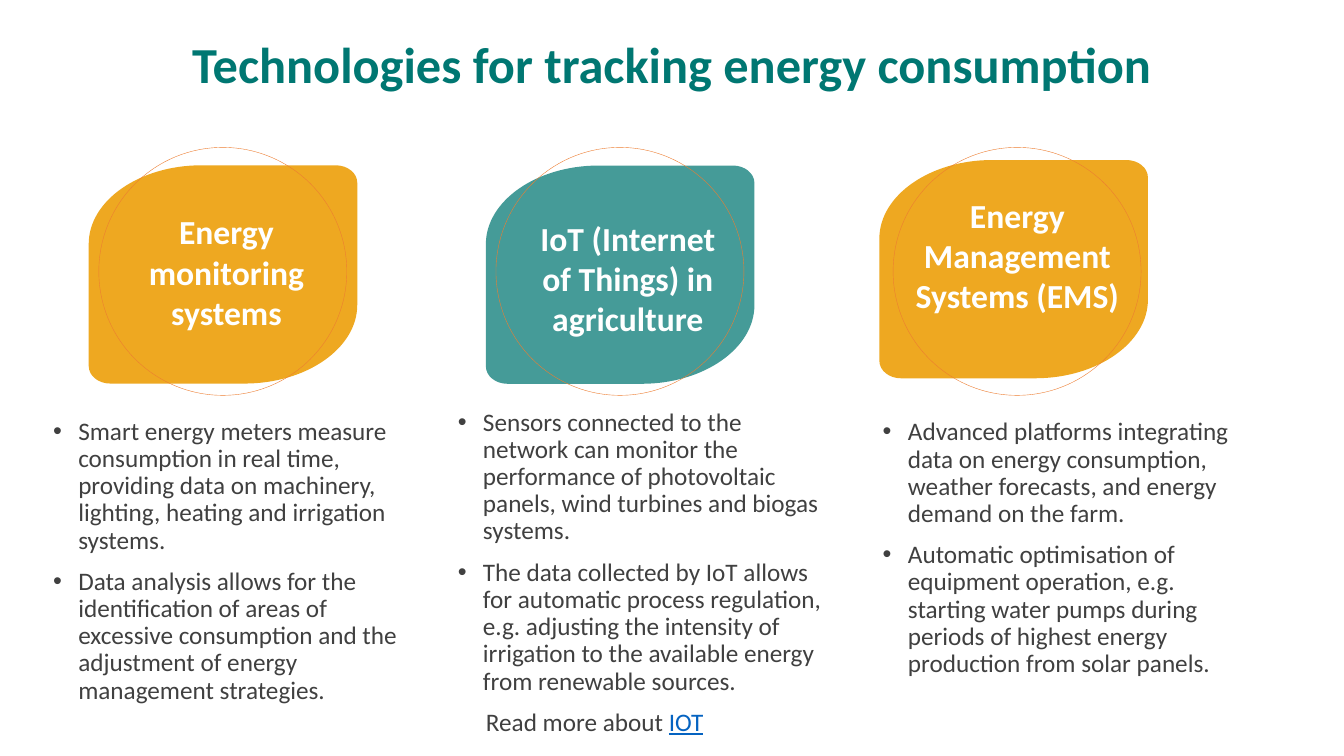
from dataclasses import dataclass

from lxml.etree import SubElement
from pptx import Presentation
from pptx.dml.color import RGBColor
from pptx.enum.shapes import MSO_SHAPE as Preset
from pptx.enum.text import MSO_ANCHOR as Anchor, MSO_AUTO_SIZE as AutoSize, PP_ALIGN as Align
from pptx.oxml.ns import qn
from pptx.util import Emu, Inches, Pt

WHITE = RGBColor(0xFF, 0xFF, 0xFF)
TEAL = RGBColor(0x00, 0x77, 0x72)
AMBER = RGBColor(0xEE, 0xA8, 0x21)
ORANGE = RGBColor(0xED, 0x7D, 0x31)
GREY = RGBColor(0x40, 0x40, 0x40)
LINK_BLUE = RGBColor(0x05, 0x63, 0xC1)

SLIDE_W, SLIDE_H = Inches(13.33), Inches(7.5)
COMPARISON_LAYOUT = 4
LEAF_W, LEAF_H = 19.98, 28.87
RING_LEFT, RING_TOP, RING_PITCH = 7.35, 19.5, 29.55
RING_W, RING_H = 18.45, 32.8
ARC_PULL = 0.55  # share of the way to the corner that rounds a Bezier curve


@dataclass(frozen=True)
class Box:
    """Left, top, width and height in percent of the slide's size."""
    left: float
    top: float
    width: float
    height: float

    def emu(self) -> tuple[Emu, Emu, Emu, Emu]:
        return (Emu(round(SLIDE_W * self.left / 100)), Emu(round(SLIDE_H * self.top / 100)),
                Emu(round(SLIDE_W * self.width / 100)), Emu(round(SLIDE_H * self.height / 100)))


@dataclass(frozen=True)
class Technology:
    name: str
    color: RGBColor
    leaf: Box
    label: Box
    body: Box
    points: tuple[str, ...]
    opacity: int = 100
    further_reading: str = ""


TECHNOLOGIES = (
    Technology(
        "Energy monitoring systems", AMBER,
        Box(6.6, 21.87, LEAF_W, LEAF_H), Box(9.05, 27.28, 15.6, 22.93), Box(3.2, 54.67, 27.3, 38.93),
        ("Smart energy meters measure consumption in real time, providing data on machinery, "
         "lighting, heating and irrigation systems.",
         "Data analysis allows for the identification of areas of excessive consumption and the "
         "adjustment of energy management strategies.")),
    Technology(
        "IoT (Internet of Things) in agriculture", TEAL,
        Box(36.15, 21.9, LEAF_W, LEAF_H), Box(38.5, 28.13, 16.43, 22.93), Box(33.31, 53.47, 29.03, 38.93),
        ("Sensors connected to the network can monitor the performance of photovoltaic panels, "
         "wind turbines and biogas systems.",
         "The data collected by IoT allows for automatic process regulation, e.g. adjusting the "
         "intensity of irrigation to the available energy from renewable sources."),
        opacity=73, further_reading="IOT"),
    Technology(
        "Energy Management Systems (EMS)", AMBER,
        Box(65.43, 21.17, LEAF_W, LEAF_H), Box(65.57, 25.07, 20.25, 17.47), Box(64.93, 54.76, 29.03, 38.93),
        ("Advanced platforms integrating data on energy consumption, weather forecasts, and "
         "energy demand on the farm.",
         "Automatic optimisation of equipment operation, e.g. starting water pumps during "
         "periods of highest energy production from solar panels.")),
)


def place(shape, box: Box) -> None:
    shape.left, shape.top, shape.width, shape.height = box.emu()


def prepare_frame(shape):
    frame = shape.text_frame
    frame.word_wrap = True
    frame.auto_size = AutoSize.NONE
    frame.vertical_anchor = Anchor.TOP
    return frame


def write(paragraph, text: str, *, size: int, color: RGBColor,
          bold: bool = False, underline: bool = False) -> None:
    run = paragraph.add_run()
    run.text = text
    run.font.name = "Calibri"
    run.font.size = Pt(size)
    run.font.bold = bold
    run.font.underline = underline
    run.font.color.rgb = color


def format_list_item(paragraph, *, margin: float, first: bool = False, bullet: bool = True) -> None:
    properties = paragraph._p.get_or_add_pPr()
    properties.set("marL", str(Inches(margin)))
    properties.set("indent", str(-Inches(margin) if bullet else 0))
    if bullet:
        SubElement(properties, qn("a:buFont"), typeface="Arial")
        SubElement(properties, qn("a:buChar"), char="•")
    else:
        SubElement(properties, qn("a:buNone"))
    paragraph.alignment = Align.LEFT
    paragraph.line_spacing = 0.9
    paragraph.space_before = Pt(0 if first else 10)


def leaf_corners(box: Box) -> list[tuple[int, int]]:
    """Clockwise, the points where each rounded corner starts and ends."""
    left, top, width, height = box.emu()
    shares = ((0, 0.36), (0.42, 0), (0.92, 0), (1, 0.08),
              (1, 0.64), (0.58, 1), (0.08, 1), (0, 0.92))
    return [(round(left + width * x), round(top + height * y)) for x, y in shares]


def round_corners(leaf) -> None:
    """Turn every other segment of the outline, a cut corner, into a curve."""
    outline = next(leaf._element.iter(qn("a:pathLst")))[0]
    points = [(int(pt.get("x")), int(pt.get("y"))) for pt in outline.iter(qn("a:pt"))]
    segments = outline.findall(qn("a:lnTo"))
    for index in range(0, len(segments), 2):
        start, end = points[index:index + 2]
        corner = (start[0], end[1]) if index % 4 == 0 else (end[0], start[1])
        curve = SubElement(outline, qn("a:cubicBezTo"))
        for anchor, pull in ((start, ARC_PULL), (end, ARC_PULL), (end, 0)):
            x, y = (round(a + (c - a) * pull) for a, c in zip(anchor, corner))
            SubElement(curve, qn("a:pt"), x=str(x), y=str(y))
        outline.replace(segments[index], curve)


def add_leaf(slide, technology: Technology) -> None:
    start, *others = leaf_corners(technology.leaf)
    builder = slide.shapes.build_freeform(*start, scale=1.0)
    builder.add_line_segments(others, close=True)
    leaf = builder.convert_to_shape()
    round_corners(leaf)
    leaf.shadow.inherit = False
    leaf.line.fill.background()
    leaf.fill.solid()
    leaf.fill.fore_color.rgb = technology.color
    if technology.opacity < 100:
        color = leaf._element.spPr.find(qn("a:solidFill"))[0]
        SubElement(color, qn("a:alpha"), val=str(technology.opacity * 1000))


def add_label(slide, technology: Technology) -> None:
    frame = prepare_frame(slide.shapes.add_textbox(*technology.label.emu()))
    paragraph = frame.paragraphs[0]
    paragraph.alignment = Align.CENTER
    write(paragraph, technology.name, size=24, color=WHITE, bold=True)


def add_ring(slide, column: int) -> None:
    box = Box(RING_LEFT + column * RING_PITCH, RING_TOP, RING_W, RING_H)
    ring = slide.shapes.add_shape(Preset.OVAL, *box.emu())
    ring.shadow.inherit = False
    ring.fill.background()
    ring.line.color.rgb = ORANGE
    ring.line.width = Pt(0.28)


def fill_title(title) -> None:
    place(title, Box(0, 4.67, 100, 11.73))
    paragraph = prepare_frame(title).paragraphs[0]
    paragraph.alignment = Align.CENTER
    paragraph.line_spacing = 0.9
    write(paragraph, "Technologies for tracking energy consumption", size=36, color=TEAL, bold=True)


def fill_body(body, technology: Technology) -> None:
    place(body, technology.body)
    frame = prepare_frame(body)
    for index, point in enumerate(technology.points):
        paragraph = frame.add_paragraph() if index else frame.paragraphs[0]
        format_list_item(paragraph, margin=0.25, first=index == 0)
        write(paragraph, point, size=18, color=GREY)
    if technology.further_reading:
        paragraph = frame.add_paragraph()
        format_list_item(paragraph, margin=0.28, bullet=False)
        write(paragraph, "Read more about ", size=18, color=GREY)
        write(paragraph, technology.further_reading, size=18, color=LINK_BLUE, underline=True)


def main() -> None:
    deck = Presentation()
    deck.slide_width, deck.slide_height = SLIDE_W, SLIDE_H
    slide = deck.slides.add_slide(deck.slide_layouts[COMPARISON_LAYOUT])
    title, *bodies, spare = slide.placeholders
    spare._element.getparent().remove(spare._element)

    fill_title(title)
    for column, (technology, body) in enumerate(zip(TECHNOLOGIES, bodies)):
        add_leaf(slide, technology)
        add_label(slide, technology)
        fill_body(body, technology)
        add_ring(slide, column)
    deck.save("out.pptx")


if __name__ == "__main__":
    main()
